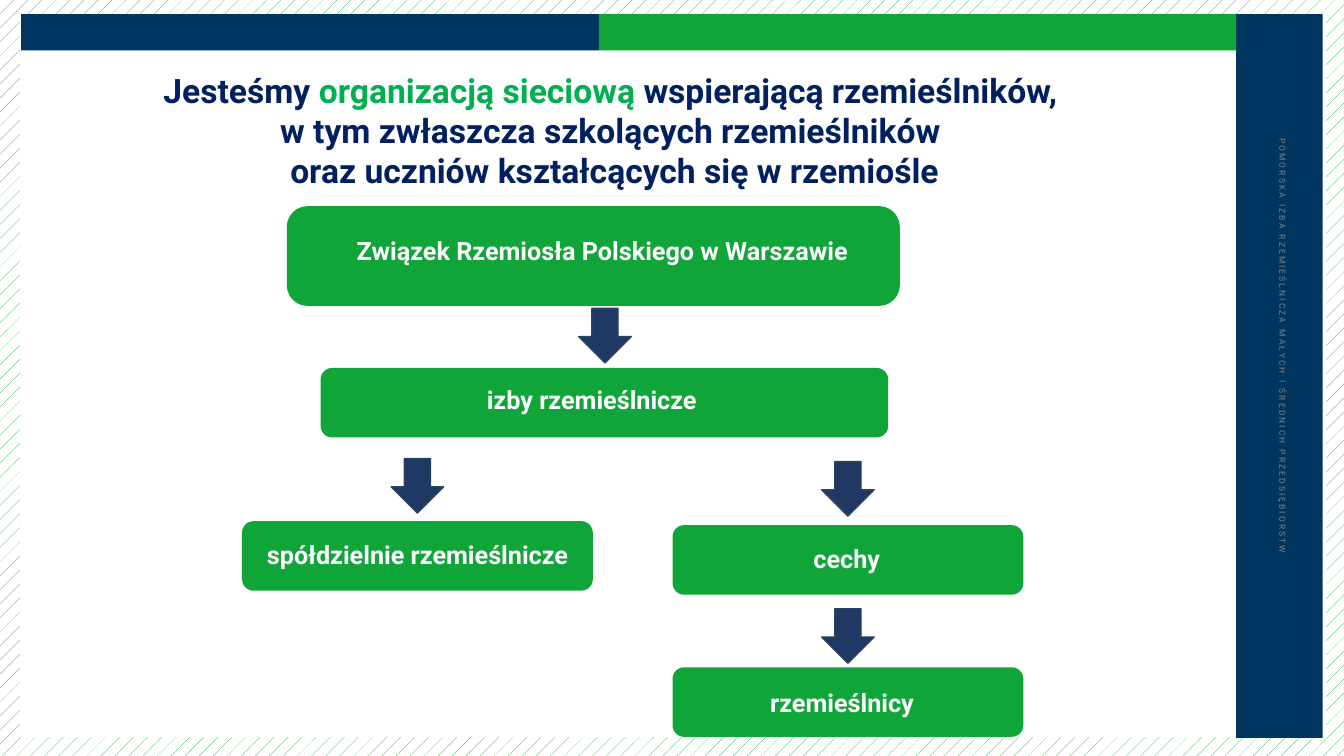
from pptx import Presentation
from pptx.dml.color import RGBColor
from pptx.enum import dml, shapes, text
from pptx.util import Inches, Pt

NAVY = RGBColor(0x00, 0x35, 0x5F)
GREEN = RGBColor(0x10, 0xA5, 0x38)
WHITE = RGBColor(0xFF, 0xFF, 0xFF)
GREY = RGBColor(0x80, 0x80, 0x80)
INK = RGBColor(0x00, 0x20, 0x60)
LEAF = RGBColor(0x00, 0xB0, 0x50)
ARROW = RGBColor(0x20, 0x38, 0x64)
EDGE = RGBColor(0x28, 0x44, 0x5D)
FONT = "Roboto"
WIDE, HIGH = 13.33, 7.5

# Content: places are left, top, width, height in inches
FRAME = [
    ((0.2, 0.14, 12.95, 7.17), WHITE),
    ((12.26, 0.14, 0.86, 7.18), NAVY),
    ((0.21, 0.14, 5.73, 0.36), NAVY),
    ((5.94, 0.14, 6.32, 0.36), GREEN),
]
SIDE = "POMORSKA IZBA RZEMIEŚLNICZA MAŁYCH I ŚREDNICH PRZEDSIĘBIORSTW"
TITLE = [
    [("Jesteśmy ", INK), ("organizacją sieciową ", LEAF),
     ("wspierającą rzemieślników, ", INK)],
    [("w tym zwłaszcza szkolących rzemieślników ", INK)],
    [("oraz uczniów kształcących się w rzemiośle", INK)],
]
# Label, box, left and top of the label
LEVELS = [
    ("Związek Rzemiosła Polskiego w Warszawie", (2.85, 2.05, 6.07, 0.98), (3.44, 2.29)),
    ("izby rzemieślnicze", (3.18, 3.65, 5.63, 0.69), (4.73, 3.76)),
    ("spółdzielnie rzemieślnicze", (2.4, 5.17, 3.48, 0.69), (2.55, 5.3)),
    ("cechy", (6.67, 5.21, 3.48, 0.69), (7.97, 5.34)),
    ("rzemieślnicy", (6.67, 6.62, 3.48, 0.69), (7.54, 6.77)),
]
ARROWS = [(5.74, 3.06), (3.88, 4.55), (8.15, 4.58), (8.15, 6.04)]

deck = Presentation()
deck.slide_width, deck.slide_height = Inches(WIDE), Inches(HIGH)
slide = deck.slides.add_slide(deck.slide_layouts[6])
KIND = shapes.MSO_SHAPE


def block(kind, place, color, edge=None, width=1):
    item = slide.shapes.add_shape(kind, *map(Inches, place))
    item.shadow.inherit = False
    item.fill.solid()
    item.fill.fore_color.rgb = color
    if edge is None:
        item.line.fill.background()
    else:
        item.line.color.rgb = edge
        item.line.width = Pt(width)
    return item


def label(place, lines, size, bold=True, align=text.PP_ALIGN.CENTER):
    box = slide.shapes.add_textbox(*map(Inches, place))
    box.text_frame.word_wrap = True
    para = box.text_frame.paragraphs[0]
    para.alignment = align
    for i, line in enumerate(lines):
        if i:
            para.add_line_break()
        for words, color in line:
            run = para.add_run()
            run.text = words
            run.font.name, run.font.size, run.font.bold = FONT, Pt(size), bold
            run.font.color.rgb = color
    return box


# Hatched background and frame
back = slide.background.fill
back.patterned()
back.pattern = dml.MSO_PATTERN.PERCENT_5
back.fore_color.rgb, back.back_color.rgb = GREEN, WHITE
for place, color in FRAME:
    block(KIND.RECTANGLE, place, color)

# Side caption
side = label((10.39, 3.33, 4.66, 0.2), [[(SIDE, GREY)]], 6, bold=False)
side.rotation = 90
side.text_frame.paragraphs[0].runs[0].font._element.set("spc", "150")

# Title
label((1.1, 0.64, 9.99, 1.31), TITLE, 24)

# Organisation levels
for i, (name, place, (x, y)) in enumerate(LEVELS):
    box = block(KIND.ROUNDED_RECTANGLE, place, GREEN,
                None if i else GREEN, 0.75)
    if i == 0:
        box.adjustments[0] = 0.205
    label((x, y, min(6.67, WIDE - x), 0.4), [[(name, WHITE)]], 18,
          align=text.PP_ALIGN.LEFT)

# Arrows between levels
for x, y in ARROWS:
    block(KIND.DOWN_ARROW, (x, y, 0.52, 0.54), ARROW, EDGE)

deck.save("out.pptx")
